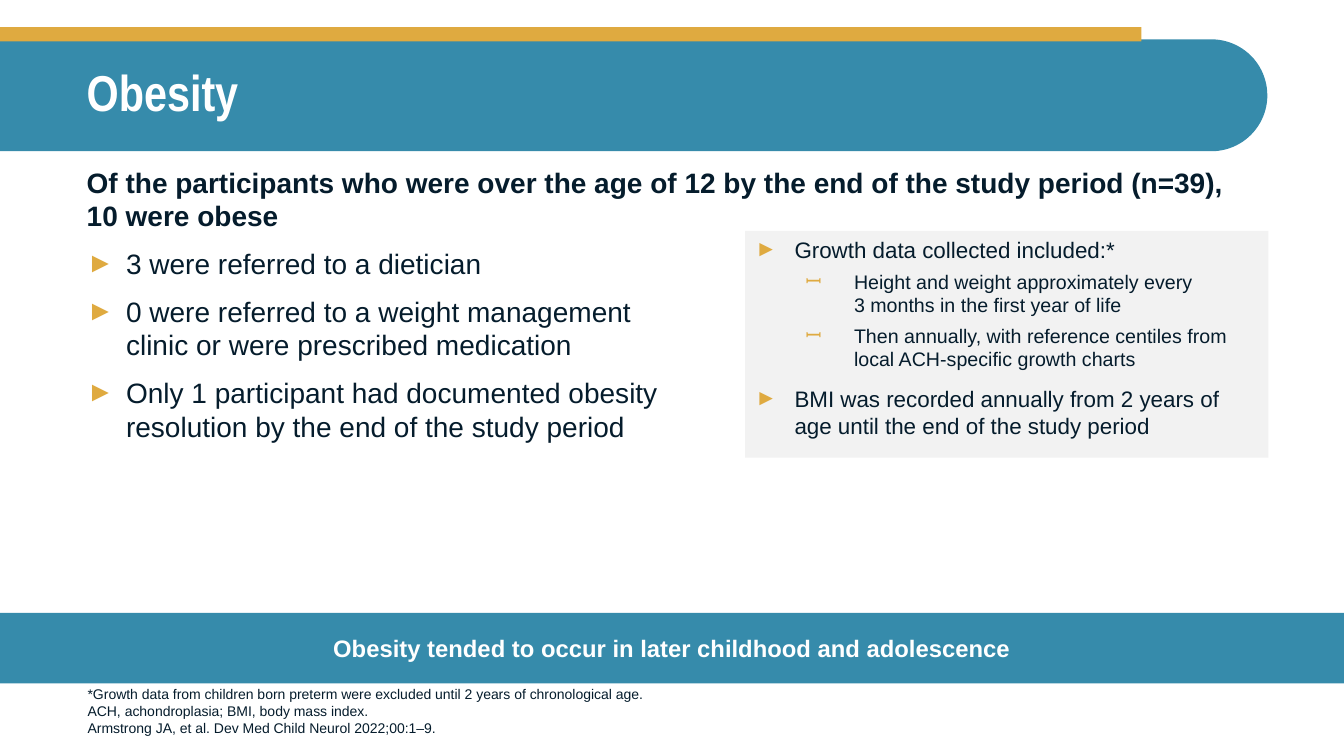
from dataclasses import dataclass

from lxml import etree
from pptx import Presentation
from pptx.dml.color import RGBColor
from pptx.enum.shapes import MSO_SHAPE
from pptx.enum.text import MSO_ANCHOR, MSO_AUTO_SIZE, PP_ALIGN
from pptx.oxml.ns import qn
from pptx.util import Inches, Pt

RECT = MSO_SHAPE.RECTANGLE
ROUND = MSO_SHAPE.ROUND_2_SAME_RECTANGLE
TOP, MIDDLE, BOTTOM = MSO_ANCHOR.TOP, MSO_ANCHOR.MIDDLE, MSO_ANCHOR.BOTTOM
LEFT, CENTER = PP_ALIGN.LEFT, PP_ALIGN.CENTER
NO_FIT = MSO_AUTO_SIZE.NONE


@dataclass(frozen=True)
class Theme:
    teal: str = "368BAB"
    gold: str = "DFAA40"
    ink: str = "051C2C"
    white: str = "FFFFFF"
    panel: str = "F2F2F2"
    face: str = "Arial"
    narrow: str = "Arial Narrow"
    title: int = 36
    lead: int = 20
    banner: int = 17
    side: int = 16
    sub: int = 14
    note: int = 10


THEME = Theme()
MARKS = {"lead": None, "item": ("►", 0.39, -0.39), "sub": ("ꟷ", 0.98, -0.48)}
FINDINGS = [
    ("lead", "Of the participants who were over the age of 12 by the end "
             "of the study period (n=39), \n10 were obese"),
    ("item", "3 were referred to a dietician"),
    ("item", "0 were referred to a weight management \n"
             "clinic or were prescribed medication"),
    ("item", "Only 1 participant had documented obesity\n"
             "resolution by the end of the study period"),
]
GROWTH = [
    ("item", "Growth data collected included:*"),
    ("sub", "Height and weight approximately every \n"
            "3 months in the first year of life"),
    ("sub", "Then annually, with reference centiles from "
            "local ACH-specific growth charts"),
    ("item", "BMI was recorded annually from 2 years of "
             "age until the end of the study period"),
]
NOTES = [
    "*Growth data from children born preterm were excluded until "
    "2 years of chronological age.",
    "ACH, achondroplasia; BMI, body mass index.",
    "Armstrong JA, et al. Dev Med Child Neurol 2022;00:1–9.",
]


def paint(shape, color):
    shape.fill.solid()
    shape.fill.fore_color.rgb = RGBColor.from_string(color)


def place(shape, box):
    shape.left, shape.top, shape.width, shape.height = map(Inches, box)


def add_block(slide, kind, box, color):
    block = slide.shapes.add_shape(kind, *map(Inches, box))
    block.shadow.inherit = False
    paint(block, color)
    block.line.fill.background()
    return block


def set_frame(shape, anchor):
    frame = shape.text_frame
    frame.auto_size = NO_FIT
    frame.word_wrap = True
    frame.vertical_anchor = anchor
    return frame


def set_font(para, size, color=THEME.ink, bold=False, face=THEME.face):
    font = para.font
    font.name, font.size, font.bold = face, Pt(size), bold
    font.color.rgb = RGBColor.from_string(color)


def set_mark(para, mark):
    props = para._p.get_or_add_pPr()
    char, left, hang = mark or (None, 0, 0)
    props.set("marL", str(Inches(left)))
    props.set("indent", str(Inches(hang)))
    if not char:
        etree.SubElement(props, qn("a:buNone"))
        return
    tint = etree.SubElement(props, qn("a:buClr"))
    etree.SubElement(tint, qn("a:srgbClr"), val=THEME.gold)
    etree.SubElement(props, qn("a:buFont"), typeface=THEME.face)
    etree.SubElement(props, qn("a:buChar"), char=char)


def add_paras(frame, texts):
    for i, text in enumerate(texts):
        para = frame.add_paragraph() if i else frame.paragraphs[0]
        para.text = text
        yield i, para


def fill_list(shape, box, rows, sizes):
    place(shape, box)
    frame = set_frame(shape, TOP)
    for i, para in add_paras(frame, [text for _, text in rows]):
        role = rows[i][0]
        para.level = int(role == "sub")
        para.alignment = LEFT
        para.space_before = Pt(0 if i == 0 else 5 if role == "sub" else 10)
        set_mark(para, MARKS[role])
        set_font(para, sizes[role], bold=role == "lead")


def fill_title(shape):
    place(shape, (0.76, 0.39, 11.81, 1.1))
    para = set_frame(shape, MIDDLE).paragraphs[0]
    para.text = "Obesity"
    para.alignment = LEFT
    para.line_spacing = 0.9
    set_font(para, THEME.title, THEME.white, True, THEME.narrow)


def add_header(slide):
    band = add_block(slide, ROUND, (5.73, -5.34, 1.11, 12.57), THEME.teal)
    band.rotation = 270
    band.adjustments[0], band.adjustments[1] = 0, 0.5
    strip = add_block(slide, RECT, (0, 0.27, 11.32, 0.14), THEME.gold)
    tree = slide.shapes._spTree
    for spot, shape in enumerate((band, strip), 2):
        tree.insert(spot, shape._element)


def add_notes(slide):
    box = slide.shapes.add_textbox(*map(Inches, (0.77, 6.71, 9.88, 0.64)))
    for _, para in add_paras(set_frame(box, BOTTOM), NOTES):
        set_font(para, THEME.note)


def add_banner(slide):
    bar = add_block(slide, RECT, (0, 6.08, 13.33, 0.7), THEME.teal)
    para = set_frame(bar, MIDDLE).paragraphs[0]
    para.text = "Obesity tended to occur in later childhood and adolescence"
    para.alignment = CENTER
    set_font(para, THEME.banner, THEME.white, True)


def main():
    deck = Presentation()
    deck.slide_width, deck.slide_height = Inches(13.33), Inches(7.5)
    slide = deck.slides.add_slide(deck.slide_layouts[3])
    title, left, right = slide.placeholders
    add_header(slide)
    fill_title(title)
    fill_list(left, (0.76, 1.59, 11.8, 4.46), FINDINGS,
              {"lead": THEME.lead, "item": THEME.lead})
    fill_list(right, (7.39, 2.29, 5.19, 2.25), GROWTH,
              {"item": THEME.side, "sub": THEME.sub})
    paint(right, THEME.panel)
    add_notes(slide)
    add_banner(slide)
    deck.save("out.pptx")


if __name__ == "__main__":
    main()
